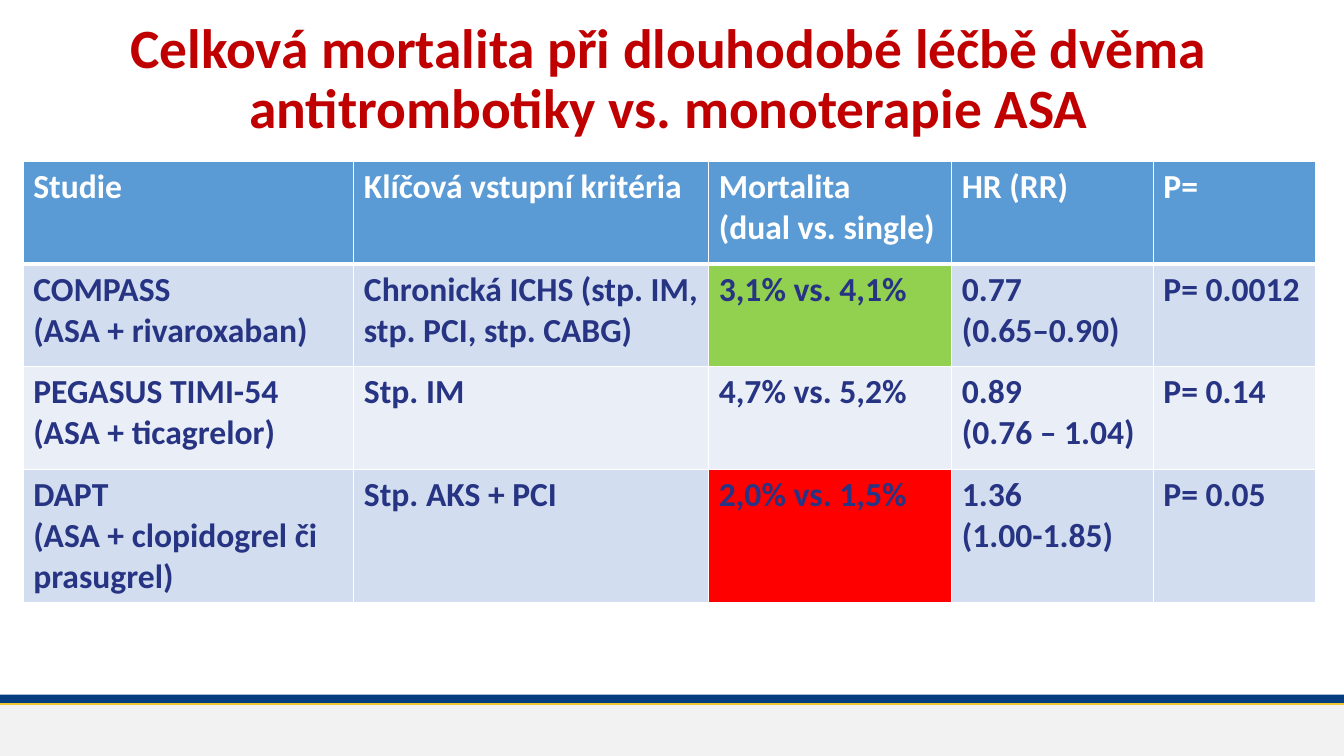
from lxml import etree
from pptx import Presentation
from pptx.dml.color import RGBColor
from pptx.enum import shapes, text
from pptx.oxml import ns
from pptx.util import Inches, Pt

TITLE = "Celková mortalita při dlouhodobé léčbě dvěma antitrombotiky vs. monoterapie ASA"
HEADINGS = ["Studie", "Klíčová vstupní kritéria", "Mortalita\n(dual vs. single)", "HR (RR)", "P="]
STUDIES = [
    ["COMPASS\n(ASA + rivaroxaban)", "Chronická ICHS (stp. IM, stp. PCI, stp. CABG)",
     "3,1% vs. 4,1%", "0.77\n(0.65–0.90)", "P= 0.0012"],
    ["PEGASUS TIMI-54\n(ASA + ticagrelor)", "Stp. IM",
     "4,7% vs. 5,2%", "0.89\n(0.76 – 1.04)", "P= 0.14"],
    ["DAPT\n(ASA + clopidogrel či prasugrel)", "Stp. AKS + PCI",
     "2,0% vs. 1,5%", "1.36\n(1.00-1.85)", "P= 0.05"],
]
COLUMN_WIDTHS = [3.28, 3.52, 2.41, 2, 1.61]
ROW_HEIGHTS = [1.02, 1.02, 1.02, 1.32]
COLORS = {
    "title": "C00000", "heading": "5B9BD5", "odd": "D2DEEF", "even": "EAEFF7",
    "better": "92D050", "worse": "FF0000", "ink": "273483", "white": "FFFFFF",
    "footer": "F2F2F2", "stripe": "043E80", "gold": "F1C634",
}
HIGHLIGHTS = {(1, 2): "better", (3, 2): "worse"}
FONT = "Calibri"
SLIDE_WIDTH, SLIDE_HEIGHT = 13.33, 7.5
FOOTER_BANDS = [("footer", 6.95, 0.55), ("stripe", 6.89, 0.09)]
GOLD_TOP = 6.98


def rgb(name):
    return RGBColor.from_string(COLORS[name])


def write(paragraph, words, size, color):
    run = paragraph.add_run()
    run.text = words
    run.font.name = FONT
    run.font.size = Pt(size)
    run.font.bold = True
    run.font.color.rgb = rgb(color)


def add_borders(cell, is_heading, below_heading):
    widths = {"L": 1, "R": 1, "T": 3 if below_heading else 1, "B": 3 if is_heading else 1}
    properties = cell._tc.get_or_add_tcPr()
    for side, width in widths.items():
        border = etree.SubElement(properties, ns.qn(f"a:ln{side}"), w=str(Pt(width)))
        fill = etree.SubElement(border, ns.qn("a:solidFill"))
        etree.SubElement(fill, ns.qn("a:srgbClr"), val=COLORS["white"])


def add_footer(slide):
    for color, top, height in FOOTER_BANDS:
        band = slide.shapes.add_shape(
            shapes.MSO_SHAPE.RECTANGLE, 0, Inches(top), Inches(SLIDE_WIDTH), Inches(height))
        band.shadow.inherit = False
        band.fill.solid()
        band.fill.fore_color.rgb = rgb(color)
        band.line.fill.background()
    gold_rule = slide.shapes.add_connector(
        shapes.MSO_CONNECTOR.STRAIGHT, 0, Inches(GOLD_TOP), Inches(SLIDE_WIDTH), Inches(GOLD_TOP))
    gold_rule.line.color.rgb = rgb("gold")
    gold_rule.line.width = Pt(1.5)
    etree.SubElement(gold_rule._element.spPr, ns.qn("a:effectLst"))


def add_title(slide):
    title = slide.shapes.add_textbox(Inches(0.37), Inches(0.15), Inches(12.52), Inches(1.3))
    frame = title.text_frame
    frame.word_wrap = True
    frame.vertical_anchor = text.MSO_ANCHOR.MIDDLE
    paragraph = frame.paragraphs[0]
    paragraph.alignment = text.PP_ALIGN.CENTER
    paragraph.line_spacing = 0.9
    write(paragraph, TITLE, 39.6, "title")


def add_mortality_table(slide):
    rows = [HEADINGS] + STUDIES
    table = slide.shapes.add_table(
        len(rows), len(HEADINGS), Inches(0.23), Inches(1.6),
        Inches(sum(COLUMN_WIDTHS)), Inches(sum(ROW_HEIGHTS))).table
    for column, width in zip(table.columns, COLUMN_WIDTHS):
        column.width = Inches(width)
    for row, height in zip(table.rows, ROW_HEIGHTS):
        row.height = Inches(height)
    for r, entries in enumerate(rows):
        row_fill = "heading" if r == 0 else "odd" if r % 2 else "even"
        ink = "white" if r == 0 else "ink"
        for c, entry in enumerate(entries):
            cell = table.cell(r, c)
            add_borders(cell, r == 0, r == 1)
            cell.fill.solid()
            cell.fill.fore_color.rgb = rgb(HIGHLIGHTS.get((r, c), row_fill))
            frame = cell.text_frame
            for i, line in enumerate(entry.split("\n")):
                paragraph = frame.add_paragraph() if i else frame.paragraphs[0]
                write(paragraph, line, 24, ink)


def main():
    deck = Presentation()
    deck.slide_width = Inches(SLIDE_WIDTH)
    deck.slide_height = Inches(SLIDE_HEIGHT)
    slide = deck.slides.add_slide(deck.slide_layouts[6])
    add_footer(slide)
    add_title(slide)
    add_mortality_table(slide)
    deck.save("out.pptx")


if __name__ == "__main__":
    main()
